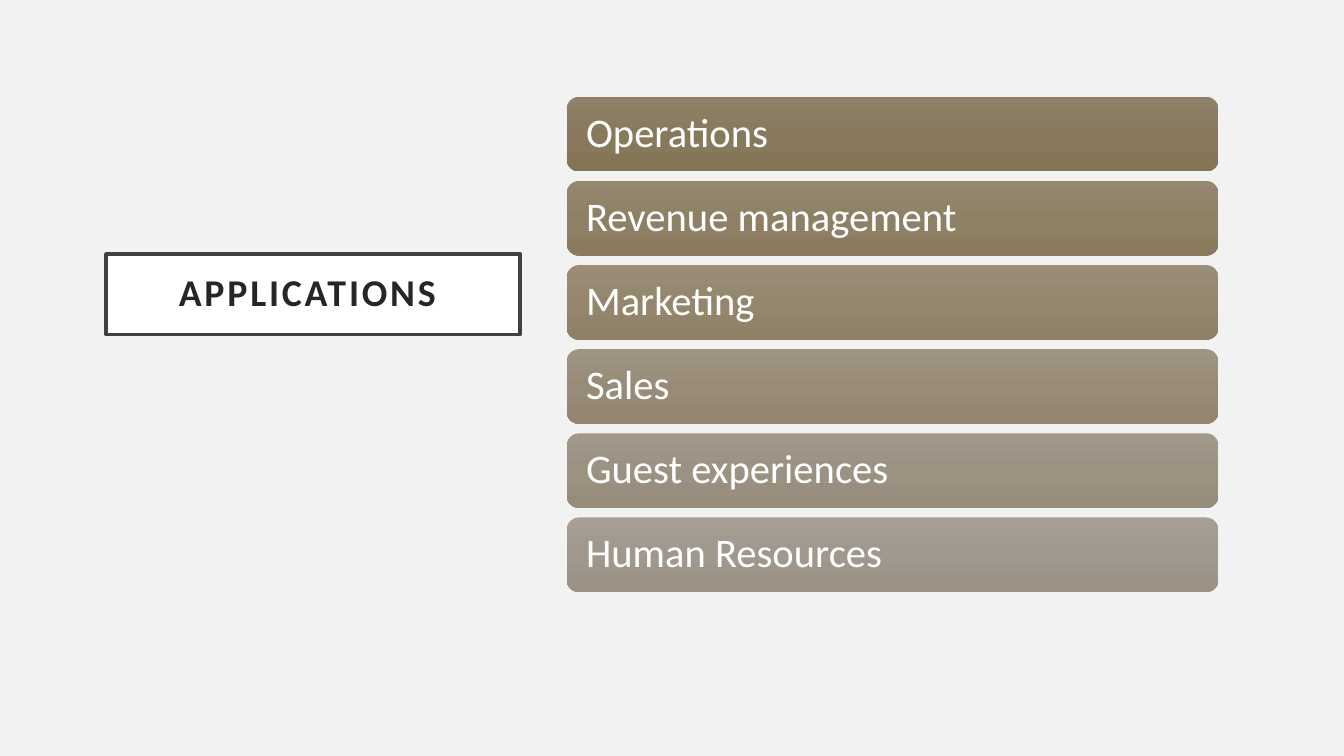
import copy

import pptx
import pptx.dml.color
import pptx.enum.shapes
import pptx.enum.text
import pptx.util

RGBColor = pptx.dml.color.RGBColor
Cm = pptx.util.Cm
Pt = pptx.util.Pt
MSO_SHAPE = pptx.enum.shapes.MSO_SHAPE
PP_ALIGN = pptx.enum.text.PP_ALIGN

BACKGROUND = RGBColor(0xF2, 0xF2, 0xF2)
WHITE = RGBColor(0xFF, 0xFF, 0xFF)
FRAME = RGBColor(0x40, 0x40, 0x40)
INK = RGBColor(0x26, 0x26, 0x26)

APPLICATIONS = [
    ("Operations", ("8F8269", "88795C", "847557")),
    ("Revenue management", ("958871", "8E8064", "8A7B5F")),
    ("Marketing", ("9A8E79", "94866D", "8F8167")),
    ("Sales", ("9E9482", "988C78", "938671")),
    ("Guest experiences", ("A2998B", "9C9282", "978C7B")),
    ("Human Resources", ("A79F95", "A0988C", "9B9285")),
]
BAR_TOP = 2.44
BAR_PITCH = 2.12


class SlideBuilder:
    font = "Calibri"

    def __init__(self, prs):
        self.s = prs.slides.add_slide(prs.slide_layouts[6])
        fill = self.s.background.fill
        fill.solid()
        fill.fore_color.rgb = BACKGROUND

    def shape(self, kind, left, top, width, height):
        sp = self.s.shapes.add_shape(kind, Cm(left), Cm(top), Cm(width), Cm(height))
        sp.shadow.inherit = False
        return sp

    def text(self, sp, text, size, color, align, inset, bold=False):
        tf = sp.text_frame
        tf.word_wrap = True
        tf.vertical_anchor = pptx.enum.text.MSO_ANCHOR.MIDDLE
        tf.margin_left = tf.margin_right = Cm(inset)
        tf.margin_top = tf.margin_bottom = Cm(0.3)
        p = tf.paragraphs[0]
        r = p.add_run()
        r.text = text
        p.alignment = align
        p.line_spacing = 0.9
        p.font.name = self.font
        p.font.size = Pt(size)
        p.font.bold = bold
        p.font.color.rgb = color
        return r

    def title(self, text):
        sp = self.shape(MSO_SHAPE.RECTANGLE, 2.67, 6.4, 10.44, 2.03)
        sp.fill.solid()
        sp.fill.fore_color.rgb = WHITE
        sp.line.color.rgb = FRAME
        sp.line.width = Pt(2.5)
        r = self.text(sp, text, 27, INK, PP_ALIGN.CENTER, 0.5, bold=True)
        r.font._element.set("spc", "200")

    def bar(self, text, top, colors):
        sp = self.shape(MSO_SHAPE.ROUNDED_RECTANGLE, 14.28, top, 16.43, 1.88)
        sp.line.fill.background()
        self.gradient(sp.fill, colors)
        self.text(sp, text, 29, WHITE, PP_ALIGN.LEFT, 0.4)

    def gradient(self, fill, colors):
        fill.gradient()
        fill.gradient_angle = 270
        first = fill.gradient_stops[0]._gs
        first.addnext(copy.deepcopy(first))
        for i, (stop, color) in enumerate(zip(fill.gradient_stops, colors)):
            stop.position = i / 2
            stop.color.rgb = RGBColor.from_string(color)


def main():
    prs = pptx.Presentation()
    prs.slide_width = Cm(33.87)
    prs.slide_height = Cm(19.05)
    builder = SlideBuilder(prs)
    builder.title("APPLICATIONS ")
    for i, (name, colors) in enumerate(APPLICATIONS):
        builder.bar(name, BAR_TOP + i * BAR_PITCH, colors)
    prs.save("out.pptx")


if __name__ == "__main__":
    main()
